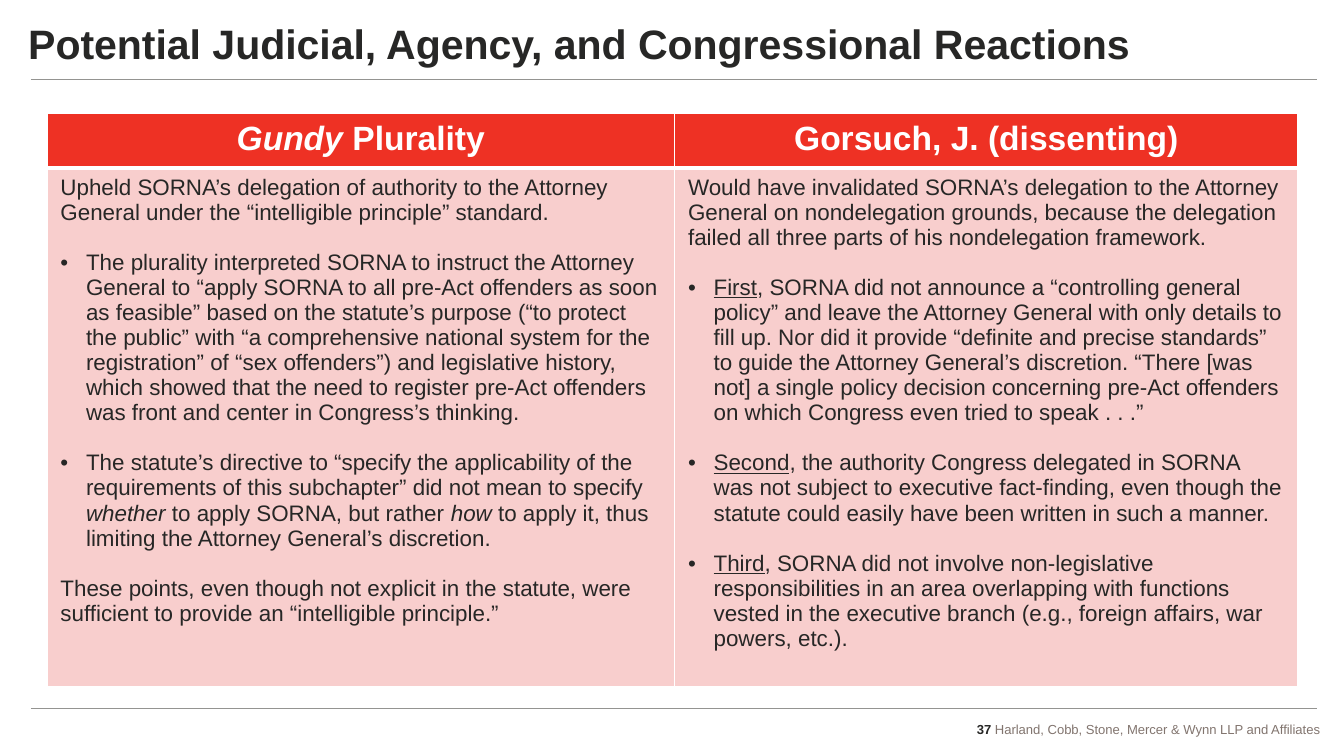
from dataclasses import dataclass

from lxml import etree
from pptx import Presentation
from pptx import util as u
from pptx.dml.color import RGBColor
from pptx.enum import shapes, text
from pptx.oxml.ns import qn

COLUMNS = 100
ROWS = COLUMNS * 9 / 16


@dataclass(frozen=True)
class Theme:
    font: str = "Arial"
    ink: str = "272726"
    muted: str = "82756F"
    rule: str = "949491"
    white: str = "FFFFFF"
    header: str = "EE3124"
    body: str = "F8CECD"
    title_size: float = 22
    header_size: float = 18
    body_size: float = 12
    footer_size: float = 7
    body_gap: float = 13.4


THEME = Theme()
ITALIC = {"italic": True}
UNDERLINE = {"underline": True}

HEADERS = [
    [("Gundy ", ITALIC), ("Plurality", {})],
    [("Gorsuch, J. (dissenting)", {})],
]

PLURALITY = [
    (False, [("Upheld SORNA’s delegation of authority to the Attorney General under the "
              "“intelligible principle” standard.", {})]),
    (True, [("The plurality interpreted SORNA to instruct the Attorney General to “apply SORNA "
             "to all pre-Act offenders as soon as feasible” based on the statute’s purpose (“to "
             "protect the public” with “a comprehensive national system for the registration” of "
             "“sex offenders”) and legislative history, which showed that the need to register "
             "pre-Act offenders was front and center in Congress’s thinking.", {})]),
    (True, [("The statute’s directive to “specify the applicability of the requirements of this "
             "subchapter” did not mean to specify ", {}),
            ("whether ", ITALIC), ("to apply SORNA, but rather ", {}), ("how ", ITALIC),
            ("to apply it, thus limiting the Attorney General’s discretion.", {})]),
    (False, [("These points, even though not explicit in the statute, were sufficient to provide "
              "an “intelligible principle.”", {})]),
]

DISSENT = [
    (False, [("Would have invalidated SORNA’s delegation to the Attorney General on nondelegation "
              "grounds, because the delegation failed all three parts of his nondelegation "
              "framework.", {})]),
    (True, [("First", UNDERLINE),
            (", SORNA did not announce a “controlling general policy” and leave the Attorney "
             "General with only details to fill up. Nor did it provide “definite and precise "
             "standards” to guide the Attorney General’s discretion. “There [was not] a single "
             "policy decision concerning pre-Act offenders on which Congress even tried to "
             "speak . . .”", {})]),
    (True, [("Second", UNDERLINE),
            (", the authority Congress delegated in SORNA was not subject to executive "
             "fact-finding, even though the statute could easily have been written in such a "
             "manner.", {})]),
    (True, [("Third", UNDERLINE),
            (", SORNA did not involve non-legislative responsibilities in an area overlapping "
             "with functions vested in the executive branch (e.g., foreign affairs, war powers, "
             "etc.).", {})]),
]


def grid(*steps):
    return [u.Inches(step / 10) for step in steps]


def set_values(target, values):
    for name, value in values.items():
        setattr(target, name, value)


def add_runs(paragraph, runs, size, color, bold=False):
    for words, emphasis in runs:
        run = paragraph.add_run()
        run.text = words
        set_values(run.font, {"name": THEME.font, "size": u.Pt(size), "bold": bold, **emphasis})
        run.font.color.rgb = RGBColor.from_string(color)


def add_bullet(paragraph):
    properties = paragraph._p.get_or_add_pPr()
    indent = u.Inches(0.19)
    properties.set("marL", str(indent))
    properties.set("indent", str(-indent))
    etree.SubElement(properties, qn("a:buFont"), typeface=THEME.font)
    etree.SubElement(properties, qn("a:buChar"), char="•")


def add_rule(slide, row):
    left, right, y = grid(2.3, 98, row)
    rule = slide.shapes.add_connector(shapes.MSO_CONNECTOR.STRAIGHT, left, y, right, y)
    rule.line.width = u.Pt(0.25)
    rule.line.color.rgb = RGBColor.from_string(THEME.rule)
    etree.SubElement(rule._element.spPr, qn("a:effectLst"))


def format_title(slide, words):
    title = slide.shapes.title
    set_values(title, dict(zip(("left", "top", "width", "height"), grid(2.1, 1.4, 84.8, 3.2))))
    frame = title.text_frame
    set_values(frame, {"margin_left": 0, "margin_right": 0, "margin_top": 0, "margin_bottom": 0,
                       "word_wrap": True, "auto_size": text.MSO_AUTO_SIZE.NONE,
                       "vertical_anchor": text.MSO_ANCHOR.TOP})
    paragraph = frame.paragraphs[0]
    paragraph.alignment = text.PP_ALIGN.LEFT
    add_runs(paragraph, [(words, {})], THEME.title_size, THEME.ink, bold=True)


def add_footer(slide, number, owner):
    frame = slide.shapes.add_textbox(*grid(65.9, 53.2, 33.3, 2.2)).text_frame
    frame.word_wrap = True
    paragraph = frame.paragraphs[0]
    paragraph.alignment = text.PP_ALIGN.RIGHT
    add_runs(paragraph, [(f"{number} ", {})], THEME.footer_size, THEME.ink, bold=True)
    add_runs(paragraph, [(owner, {})], THEME.footer_size, THEME.muted)


def format_cell(cell, color, top, bottom):
    properties = cell._tc.get_or_add_tcPr()
    for side, width in {"lnL": 1, "lnR": 1, "lnT": top, "lnB": bottom}.items():
        border = etree.SubElement(properties, qn(f"a:{side}"), w=str(u.Pt(width)))
        fill = etree.SubElement(border, qn("a:solidFill"))
        etree.SubElement(fill, qn("a:srgbClr"), val=THEME.white)
    cell.fill.solid()
    cell.fill.fore_color.rgb = RGBColor.from_string(color)


def fill_header(cell, runs):
    format_cell(cell, THEME.header, 1, 3)
    paragraph = cell.text_frame.paragraphs[0]
    paragraph.alignment = text.PP_ALIGN.CENTER
    add_runs(paragraph, runs, THEME.header_size, THEME.white, bold=True)


def fill_body(cell, points):
    format_cell(cell, THEME.body, 3, 1)
    frame = cell.text_frame
    for index, (bulleted, runs) in enumerate(points):
        paragraph = frame.add_paragraph() if index else frame.paragraphs[0]
        if index:
            paragraph.space_before = u.Pt(THEME.body_gap)
        if bulleted:
            add_bullet(paragraph)
        add_runs(paragraph, runs, THEME.body_size, THEME.ink)


def add_comparison(slide, headers, bodies):
    widths = grid(46.7, 46.4)
    left, top, height, row_height = grid(3.5, 8.4, 43.1, 4.1)
    frame = slide.shapes.add_table(2, 2, left, top, sum(widths), height)
    table = frame.table
    table.horz_banding = False
    for row in table.rows:
        row.height = row_height
    frame.height = height
    for index, (width, header, body) in enumerate(zip(widths, headers, bodies)):
        table.columns[index].width = width
        fill_header(table.cell(0, index), header)
        fill_body(table.cell(1, index), body)


def main():
    presentation = Presentation()
    presentation.slide_width, presentation.slide_height = grid(COLUMNS, ROWS)
    slide = presentation.slides.add_slide(presentation.slide_layouts[5])
    add_rule(slide, 52.7)
    add_footer(slide, 37, "Harland, Cobb, Stone, Mercer & Wynn LLP and Affiliates")
    add_rule(slide, 5.9)
    format_title(slide, "Potential Judicial, Agency, and Congressional Reactions")
    add_comparison(slide, HEADERS, [PLURALITY, DISSENT])
    presentation.save("out.pptx")


if __name__ == "__main__":
    main()
